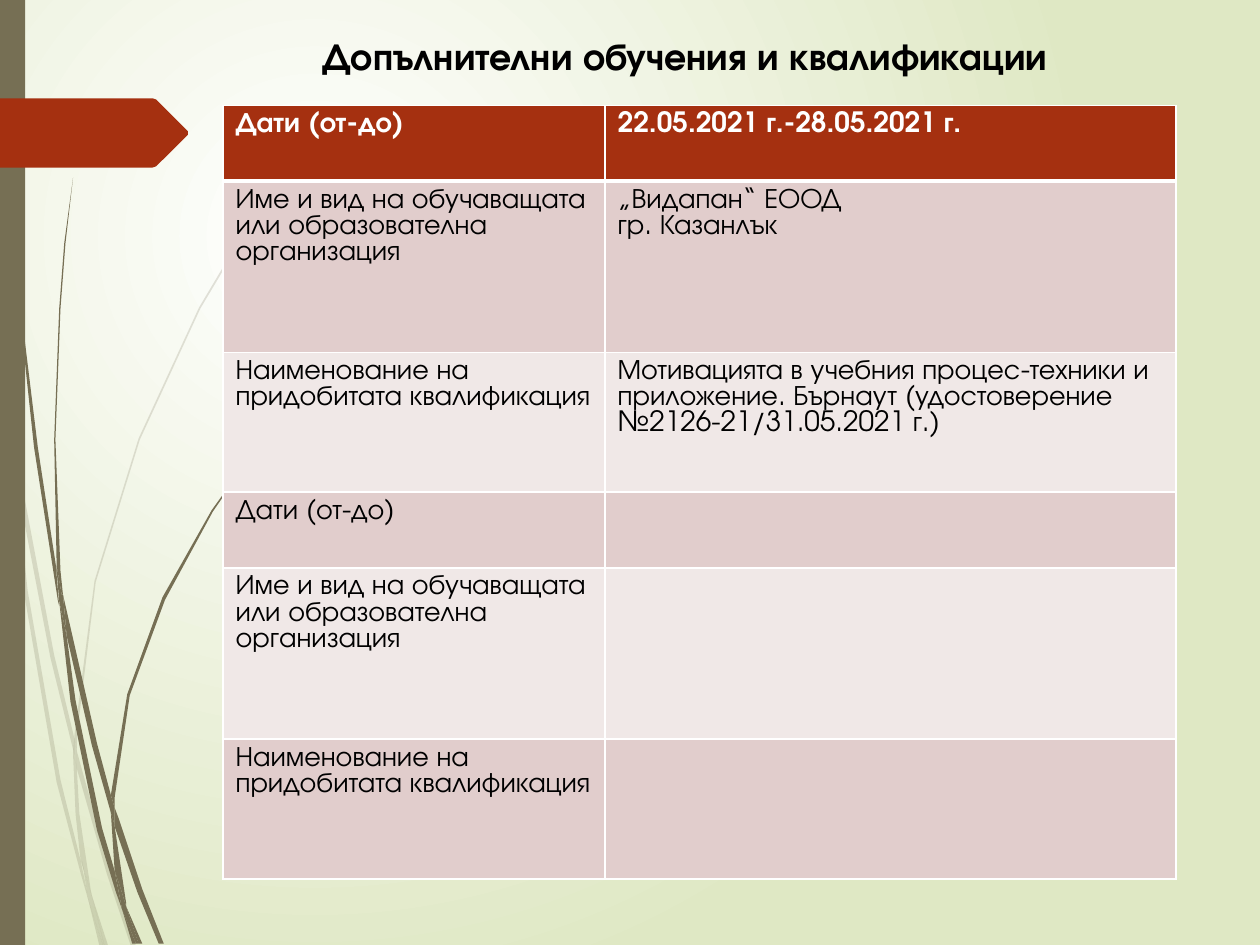
from lxml import etree
from pptx import Presentation
from pptx.dml.color import RGBColor
from pptx.enum.shapes import MSO_SHAPE
from pptx.enum.text import MSO_ANCHOR, PP_ALIGN
from pptx.oxml import parse_xml
from pptx.oxml.ns import nsdecls, qn
from pptx.util import Pt

RECTANGLE = MSO_SHAPE.RECTANGLE
MIDDLE, CENTER = MSO_ANCHOR.MIDDLE, PP_ALIGN.CENTER

FONT = "TeX Gyre Adventor"
BLACK = RGBColor(0x00, 0x00, 0x00)
WHITE = RGBColor(0xFF, 0xFF, 0xFF)
PALE_GREEN = RGBColor(0xDF, 0xE8, 0xC4)
OLIVE = RGBColor(0x76, 0x6F, 0x54)
RUST = RGBColor(0xA5, 0x30, 0x10)
PINK = RGBColor(0xE1, 0xCD, 0xCC)
PALE_PINK = RGBColor(0xF0, 0xE8, 0xE7)

# Outlines are drawn on a grid of 1000 by 750 units
GRID_UNIT = Pt(0.72)
FAINT_GRASS = [
    [(8, 350), (6, 322), (0, 282), (0, 299), (7, 344)],
    [(40, 522), (59, 599), (59, 586), (43, 520), (10, 345), (12, 376)],
    [(64, 607), (61, 596), (61, 610), (85, 694), (104, 751), (108, 751), (88, 692)],
    [(83, 751), (86, 751), (73, 711)],
    [(64, 683), (48, 619), (22, 469), (12, 376), (8, 350), (19, 470), (45, 621),
     (64, 693), (70, 714), (69, 707)],
    [(58, 599), (60, 646), (64, 683), (67, 692), (73, 711), (72, 706), (63, 646),
     (61, 610), (61, 608)],
    [(61, 584), (76, 462), (111, 349), (159, 245), (187, 198), (201, 175), (217, 154),
     (217, 153), (201, 175), (186, 197), (158, 244), (110, 348), (75, 461), (59, 584),
     (59, 586), (61, 596)],
    [(70, 714), (79, 751), (82, 751)],
    [(61, 608), (61, 610), (61, 596), (59, 586), (58, 599)],
    [(67, 692), (65, 683), (69, 707), (70, 714), (82, 751), (83, 751), (73, 711)],
]
DARK_GRASS = [
    [(5, 110), (14, 233), (27, 355), (46, 477), (47, 481), (45, 457), (45, 453),
     (30, 355), (15, 232), (6, 109), (4, 48), (3, 0), (2, 0), (3, 48)],
    [(73, 592), (88, 645), (88, 633), (88, 631), (77, 590), (50, 472), (53, 505)],
    [(94, 649), (91, 641), (91, 656), (109, 708), (126, 749), (130, 749), (113, 706)],
    [(91, 691), (81, 657), (60, 556), (53, 505), (47, 477), (56, 557), (77, 659),
     (92, 708), (97, 722), (96, 717)],
    [(50, 472), (48, 453), (44, 349), (48, 245), (52, 193), (58, 141), (57.5, 141),
     (51, 193), (47, 245), (43, 349), (45, 449), (49, 472)],
    [(110, 749), (113, 749), (100, 719)],
    [(47, 477), (53, 505), (50, 472), (49, 472), (45, 449), (45, 453)],
    [(91, 633), (103, 552), (131, 476), (169, 406), (191, 374), (203, 359), (216, 344),
     (215, 344), (203, 358), (191, 373), (168, 405), (129, 474), (101, 551), (88, 631),
     (91, 641)],
    [(97, 722), (105, 749), (108, 749)],
    [(88, 645), (91, 691), (96, 706), (100, 719), (100, 716), (91, 656), (90, 651)],
    [(88, 645), (90, 651), (91, 656), (91, 641), (88, 631), (88, 633)],
    [(96, 706), (91, 691), (96, 717), (97, 722), (108, 749), (110, 749), (100, 719)],
]
MARKER = [(149, 107), (124, 132), (121, 133), (111, 133), (0, 133), (0, 78),
          (111, 78), (121, 78), (124, 79), (149, 104)]

TITLE = "Допълнителни обучения и квалификации"
DATES = "Дати (от-до)"
ORGANIZATION = "Име и вид на обучаващата или образователна организация"
QUALIFICATION = "Наименование на придобитата квалификация"
TRAININGS = [
    (DATES, "22.05.2021 г.-28.05.2021 г."),
    (ORGANIZATION, "„Видапан“ ЕООД\nгр. Казанлък"),
    (QUALIFICATION, "Мотивацията в учебния процес-техники и приложение. "
                    "Бърнаут (удостоверение №2126-21/31.05.2021 г.)"),
    (DATES, ""),
    (ORGANIZATION, ""),
    (QUALIFICATION, ""),
]
COLUMN_WIDTHS = (218.3, 326.2)
ROW_HEIGHTS = (43.2, 97.8, 80) * 2


def paint(shape, color):
    shape.shadow.inherit = False
    shape.fill.solid()
    shape.fill.fore_color.rgb = color
    shape.line.fill.background()


def add_outline(shapes, points, color):
    builder = shapes.build_freeform(*points[0], scale=GRID_UNIT)
    builder.add_line_segments(points[1:], close=True)
    outline = builder.convert_to_shape()
    paint(outline, color)
    return outline


def add_grass(slide, blades, alpha=100):
    tuft = slide.shapes.add_group_shape()
    for points in blades:
        blade = add_outline(tuft.shapes, points, OLIVE)
        if alpha < 100:
            color = blade._element.spPr.find(qn("a:solidFill"))[0]
            etree.SubElement(color, qn("a:alpha")).set("val", str(alpha * 1000))


def set_background(slide):
    fill = slide.background.fill
    fill.gradient()
    for stop, color in zip(fill.gradient_stops, (WHITE, PALE_GREEN)):
        stop.color.rgb = color
    gradient = slide._element.find(".//" + qn("a:gradFill"))
    gradient.replace(gradient.find(qn("a:lin")), parse_xml(
        f'<a:path {nsdecls("a")} path="circle"><a:fillToRect l="50000" t="50000" '
        'r="100000" b="100000"/></a:path>'))


def add_side_decoration(slide, left, top, width, height):
    add_grass(slide, FAINT_GRASS, alpha=20)
    add_grass(slide, DARK_GRASS)
    # Side bar and page marker
    bar = slide.shapes.add_shape(RECTANGLE, Pt(left), Pt(top), Pt(width), Pt(height))
    paint(bar, OLIVE)
    add_outline(slide.shapes, MARKER, RUST)


def set_font(font, size, color, bold):
    font.name, font.size, font.bold = FONT, Pt(size), bold
    font.color.rgb = color


def place_title(slide, left, top, width, height):
    title = slide.shapes.title
    title.left, title.top, title.width, title.height = map(Pt, (left, top, width, height))
    frame = title.text_frame
    frame.text = TITLE
    frame.word_wrap = True
    frame.vertical_anchor = MIDDLE
    heading = frame.paragraphs[0]
    heading.alignment = CENTER
    set_font(heading.font, 21.6, BLACK, True)


def set_borders(cell, top, bottom):
    properties = cell._tc.get_or_add_tcPr()
    widths = {"lnL": 1, "lnR": 1, "lnT": top, "lnB": bottom}
    for index, (side, width) in enumerate(widths.items()):
        properties.insert(index, parse_xml(
            f'<a:{side} {nsdecls("a")} w="{Pt(width)}"><a:solidFill>'
            f'<a:srgbClr val="{WHITE}"/></a:solidFill></a:{side}>'))


def add_training_table(slide, left, top, width, height):
    table = slide.shapes.add_table(len(TRAININGS), len(COLUMN_WIDTHS), Pt(left),
                                   Pt(top), Pt(width), Pt(height)).table
    for column, column_width in zip(table.columns, COLUMN_WIDTHS):
        column.width = Pt(column_width)
    for i, (row, texts) in enumerate(zip(table.rows, TRAININGS)):
        row.height = Pt(ROW_HEIGHTS[i])
        header = i == 0
        for cell, text in zip(row.cells, texts):
            cell.text = text
            cell.fill.solid()
            cell.fill.fore_color.rgb = RUST if header else PINK if i % 2 else PALE_PINK
            set_borders(cell, top=3 if i == 1 else 1, bottom=3 if header else 1)
            for paragraph in cell.text_frame.paragraphs:
                paragraph.line_spacing = Pt(15)
                set_font(paragraph.font, 16, WHITE if header else BLACK, header)


def main():
    presentation = Presentation()
    presentation.slide_width, presentation.slide_height = Pt(720), Pt(540)
    slide = presentation.slides.add_slide(presentation.slide_layouts[5])
    set_background(slide)
    add_side_decoration(slide, 0, 0, 14.4, 540)
    place_title(slide, 110.7, 14.6, 561.6, 34)
    add_training_table(slide, 127.5, 60.3, sum(COLUMN_WIDTHS), sum(ROW_HEIGHTS))
    presentation.save("out.pptx")


if __name__ == "__main__":
    main()
